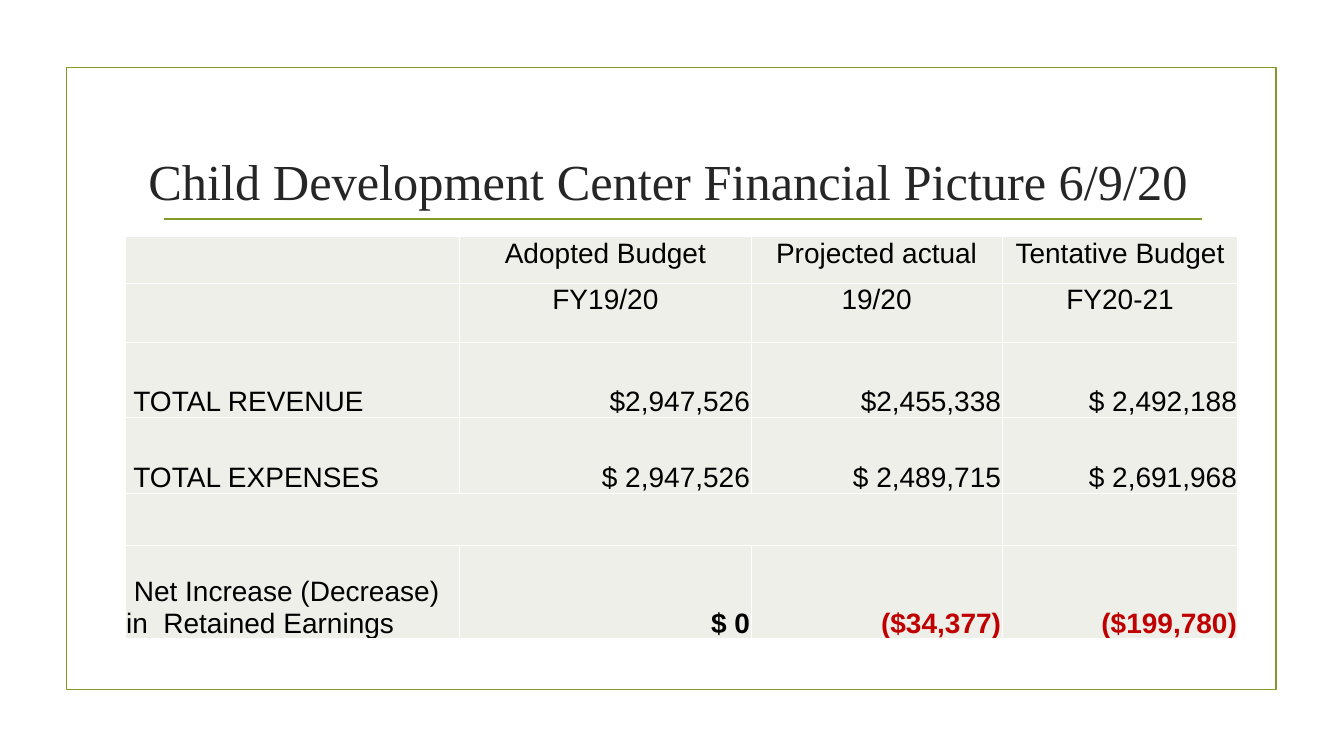
import dataclasses

import lxml.etree
import pptx
import pptx.dml.color
import pptx.enum.shapes
import pptx.enum.text
import pptx.oxml.ns
import pptx.util

PX = 9144
ALIGN = pptx.enum.text.PP_ALIGN
ANCHOR = pptx.enum.text.MSO_ANCHOR


@dataclasses.dataclass(frozen=True)
class Theme:
    """Hold the colours, fonts and type sizes of the slide."""

    accent: str = "83992A"
    title_color: str = "262626"
    text_color: str = "000000"
    loss_color: str = "C00000"
    cell_fill: str = "EDEFE8"
    cell_border: str = "FFFFFF"
    title_font: str = "Times New Roman"
    body_font: str = "Arial"
    title_size: int = 36
    body_size: int = 20
    rule_width: float = 1.25
    border_width: int = 1


THEME = Theme()
TITLE = "Child Development Center Financial Picture 6/9/20"
COLUMN_WIDTHS = [332, 289, 249, 234]
ROW_HEIGHTS = [46, 59, 74, 76, 51, 93]
HEADER_ROWS = 2
SPACER_ROW = 4
RESULT_ROW = 5
BUDGET = [
    ["", "Adopted Budget", "Projected actual", "Tentative Budget"],
    ["", "FY19/20", "19/20", "FY20-21"],
    [" TOTAL REVENUE", " $2,947,526", "$2,455,338", "$ 2,492,188"],
    [" TOTAL EXPENSES", "$ 2,947,526", "$ 2,489,715", "$ 2,691,968"],
    ["", "", "", ""],
    [" Net Increase (Decrease) in  Retained Earnings", "$ 0", "($34,377)", "($199,780)"],
]


def px(*lengths):
    """Turn pixel lengths into a list of EMU lengths."""
    return [pptx.util.Emu(length * PX) for length in lengths]


def rgb(value):
    """Turn a hex string into a colour."""
    return pptx.dml.color.RGBColor.from_string(value)


def apply_format(target, values):
    """Set each attribute named in a dict of format values."""
    for name, value in values.items():
        setattr(target, name, value)


def format_font(font, name, size, color, bold=False):
    """Give a font its face, size, colour and weight."""
    apply_format(font, {"name": name, "size": pptx.util.Pt(size), "bold": bold})
    font.color.rgb = rgb(color)


def format_line(line):
    """Give an outline the accent colour and rule width."""
    line.color.rgb = rgb(THEME.accent)
    line.width = pptx.util.Pt(THEME.rule_width)


def add_frame(slide, left, top, width, height):
    """Add the unfilled border around the slide content."""
    shape = slide.shapes.add_shape(
        pptx.enum.shapes.MSO_SHAPE.RECTANGLE, *px(left, top, width, height)
    )
    shape.shadow.inherit = False
    shape.fill.background()
    format_line(shape.line)


def add_rule(slide, left, right, y):
    """Add a horizontal rule without a shadow."""
    connector = slide.shapes.add_connector(
        pptx.enum.shapes.MSO_CONNECTOR.STRAIGHT, *px(left, y, right, y)
    )
    format_line(connector.line)
    lxml.etree.SubElement(connector._element.spPr, pptx.oxml.ns.qn("a:effectLst"))


def set_title(slide, text, left, top, width, height):
    """Move, fill and format the title placeholder."""
    title = slide.shapes.title
    apply_format(title, dict(zip(("left", "top", "width", "height"), px(left, top, width, height))))
    apply_format(title.text_frame, {
        "text": text,
        "word_wrap": True,
        "auto_size": pptx.enum.text.MSO_AUTO_SIZE.NONE,
        "vertical_anchor": ANCHOR.MIDDLE,
    })
    paragraph = title.text_frame.paragraphs[0]
    paragraph.alignment = ALIGN.CENTER
    format_font(paragraph.runs[0].font, THEME.title_font, THEME.title_size, THEME.title_color)


def add_borders(cell):
    """Draw a solid line on all four sides of a cell."""
    properties = cell._tc.get_or_add_tcPr()
    for position, side in enumerate(("a:lnL", "a:lnR", "a:lnT", "a:lnB")):
        line = lxml.etree.Element(pptx.oxml.ns.qn(side), w=str(pptx.util.Pt(THEME.border_width)))
        fill = lxml.etree.SubElement(line, pptx.oxml.ns.qn("a:solidFill"))
        lxml.etree.SubElement(fill, pptx.oxml.ns.qn("a:srgbClr"), val=THEME.cell_border)
        properties.insert(position, line)


def fill_cell(cell, text, row, column):
    """Write one budget cell and format it by its row and column."""
    margin, none = px(1, 0)
    is_header = row < HEADER_ROWS
    is_result = row == RESULT_ROW and column > 0
    apply_format(cell, {
        "margin_left": margin,
        "margin_right": margin,
        "margin_top": margin,
        "margin_bottom": none,
        "vertical_anchor": ANCHOR.TOP if is_header else ANCHOR.BOTTOM,
    })
    cell.fill.solid()
    cell.fill.fore_color.rgb = rgb(THEME.cell_fill)
    add_borders(cell)
    if text:
        cell.text = text
        paragraph = cell.text_frame.paragraphs[0]
        number_align = ALIGN.CENTER if is_header else ALIGN.RIGHT
        paragraph.alignment = number_align if column else ALIGN.LEFT
        color = THEME.loss_color if text.startswith("(") else THEME.text_color
        format_font(paragraph.runs[0].font, THEME.body_font, THEME.body_size, color, is_result)


def add_budget_table(slide, left, top):
    """Add the budget table with its merged spacer row."""
    table = slide.shapes.add_table(
        len(ROW_HEIGHTS), len(COLUMN_WIDTHS),
        *px(left, top, sum(COLUMN_WIDTHS), sum(ROW_HEIGHTS)),
    ).table
    apply_format(table, {"first_row": False, "horz_banding": False})
    for column, width in zip(table.columns, px(*COLUMN_WIDTHS)):
        column.width = width
    for row, height in zip(table.rows, px(*ROW_HEIGHTS)):
        row.height = height
    for row, texts in enumerate(BUDGET):
        for column, text in enumerate(texts):
            fill_cell(table.cell(row, column), text, row, column)
    table.cell(SPACER_ROW, 0).merge(table.cell(SPACER_ROW, 2))


def main():
    """Build and save the slide."""
    presentation = pptx.Presentation()
    presentation.slide_width, presentation.slide_height = px(1333, 750)
    slide = presentation.slides.add_slide(presentation.slide_layouts.get_by_name("Title Only"))
    add_frame(slide, 66, 67, 1200, 617)
    add_rule(slide, 163, 1192, 217)
    set_title(slide, TITLE, 124, 107, 1078, 143)
    add_budget_table(slide, 124, 235)
    presentation.save("out.pptx")


if __name__ == "__main__":
    main()
